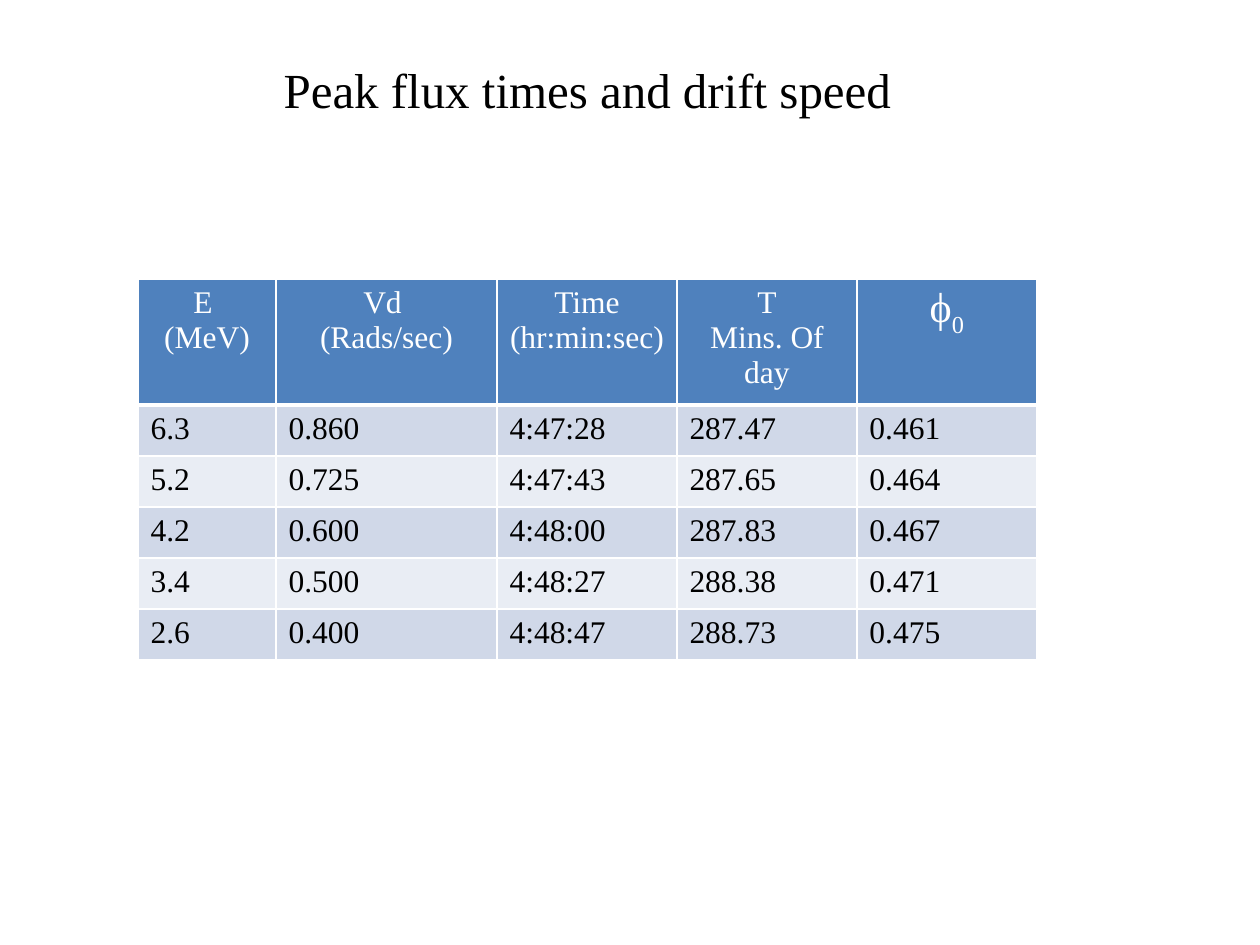
from lxml import etree
from pptx import Presentation
from pptx.dml.color import RGBColor
from pptx.enum.text import MSO_ANCHOR, MSO_AUTO_SIZE, PP_ALIGN
from pptx.oxml.ns import qn
from pptx.util import Pt

PX = 914400 / 126
TITLE_ONLY = 5
LEFT, CENTER = PP_ALIGN.LEFT, PP_ALIGN.CENTER
TOP = MSO_ANCHOR.TOP
GROW = MSO_AUTO_SIZE.SHAPE_TO_FIT_TEXT
FONT = "Times New Roman"
WHITE, BLACK = "FFFFFF", "000000"
HEADER_FILL, BANDS = "4F81BD", ("D0D8E8", "E9EDF4")

COLUMN_WIDTHS = (138, 221, 180, 180, 180)
HEADER_HEIGHT, ROW_HEIGHT = 116, 51
HEADERS = ("E \n(MeV)", "Vd \n(Rads/sec)", "Time\n(hr:min:sec)", "T\nMins. Of day", "ϕ")
ROWS = (
    ("6.3", "0.860", "4:47:28", "287.47", "0.461"),
    ("5.2", "0.725", "4:47:43", "287.65", "0.464"),
    ("4.2", "0.600", "4:48:00", "287.83", "0.467"),
    ("3.4", "0.500", "4:48:27", "288.38", "0.471"),
    ("2.6", "0.400", "4:48:47", "288.73", "0.475"),
)


def px(length):
    return round(length * PX)


def color(value):
    return RGBColor.from_string(value)


def style_paragraph(paragraph, size, text_color, alignment):
    paragraph.alignment = alignment
    paragraph.font.name = FONT
    paragraph.font.size = Pt(size)
    paragraph.font.bold = False
    paragraph.font.color.rgb = color(text_color)


def set_borders(cell, top, bottom):
    properties = cell._tc.get_or_add_tcPr()
    for side, width in (("L", 1), ("R", 1), ("T", top), ("B", bottom)):
        line = etree.SubElement(properties, qn(f"a:ln{side}"), w=str(Pt(width)))
        fill = etree.SubElement(line, qn("a:solidFill"))
        etree.SubElement(fill, qn("a:srgbClr"), val=WHITE)


def add_title(slide, left, top, width, height):
    title = slide.shapes.title
    title.left, title.top, title.width, title.height = map(px, (left, top, width, height))
    frame = title.text_frame
    frame.text = "Peak flux times and drift speed"
    frame.word_wrap = False
    frame.auto_size = GROW
    frame.vertical_anchor = TOP
    style_paragraph(frame.paragraphs[0], 28, BLACK, LEFT)


def fill_cell(cell, text, row):
    is_header = row == 0
    # The header is set off by a thicker line below it
    set_borders(cell, top=3 if row == 1 else 1, bottom=3 if is_header else 1)
    cell.fill.solid()
    cell.fill.fore_color.rgb = color(HEADER_FILL if is_header else BANDS[(row - 1) % 2])
    cell.text = text
    for paragraph in cell.text_frame.paragraphs:
        style_paragraph(paragraph, 18, WHITE if is_header else BLACK,
                        CENTER if is_header else LEFT)


def add_subscript(paragraph, text):
    run = paragraph.add_run()
    run.text = text
    run._r.get_or_add_rPr().set("baseline", "-25000")


def add_flux_table(slide, left, top):
    height = HEADER_HEIGHT + ROW_HEIGHT * len(ROWS)
    table = slide.shapes.add_table(
        len(ROWS) + 1, len(HEADERS),
        px(left), px(top), px(sum(COLUMN_WIDTHS)), px(height)).table
    for column, width in zip(table.columns, COLUMN_WIDTHS):
        column.width = px(width)
    for row, values in enumerate((HEADERS, *ROWS)):
        table.rows[row].height = px(ROW_HEIGHT if row else HEADER_HEIGHT)
        for column, value in enumerate(values):
            fill_cell(table.cell(row, column), value, row)

    # Larger phi symbol with its subscript
    phi = table.cell(0, len(HEADERS) - 1).text_frame.paragraphs[0]
    phi.font.size = Pt(24)
    add_subscript(phi, "0")


def main():
    presentation = Presentation()
    presentation.slide_width, presentation.slide_height = px(1260), px(945)
    slide = presentation.slides.add_slide(presentation.slide_layouts[TITLE_ONLY])
    add_title(slide, 271, 53, 643, 72)
    add_flux_table(slide, 138, 279)
    presentation.save("out.pptx")


if __name__ == "__main__":
    main()
